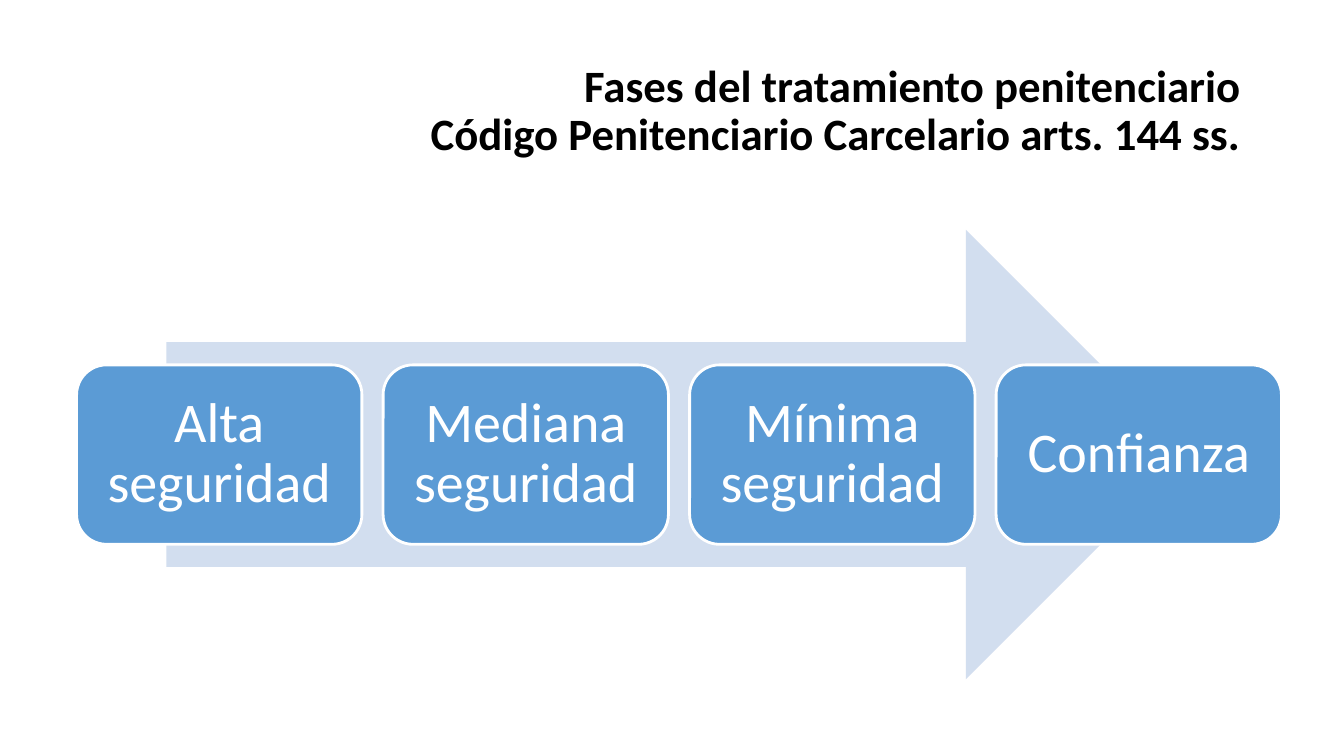
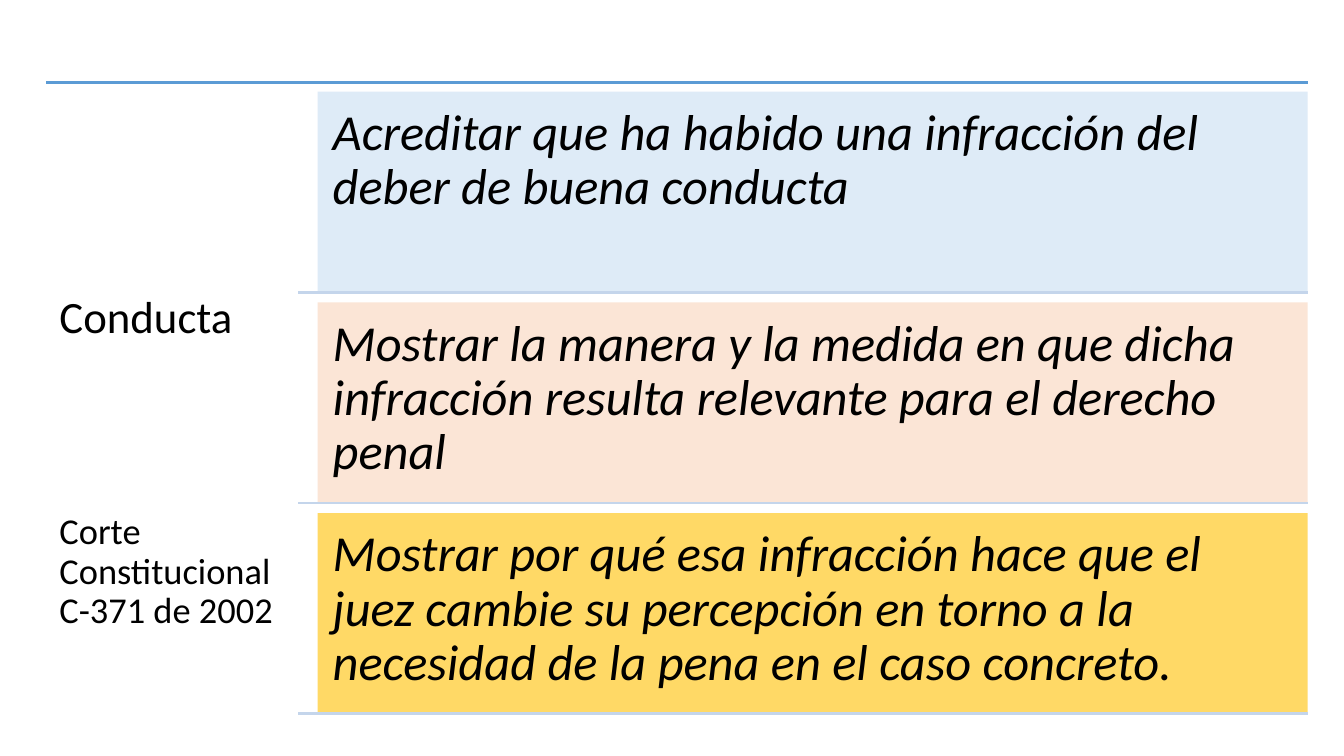
"""Builds two slides on the phases of prison treatment and on the criterion of conduct."""
from dataclasses import dataclass

from lxml import etree
from pptx import Presentation
from pptx.dml.color import RGBColor
from pptx.enum.shapes import MSO_CONNECTOR, MSO_SHAPE
from pptx.enum.text import MSO_ANCHOR, MSO_AUTO_SIZE, PP_ALIGN
from pptx.oxml.ns import qn
from pptx.util import Pt

LEFT, CENTER, RIGHT = PP_ALIGN.LEFT, PP_ALIGN.CENTER, PP_ALIGN.RIGHT
TOP, MIDDLE = MSO_ANCHOR.TOP, MSO_ANCHOR.MIDDLE
ARROW, ROUNDED, RECTANGLE = MSO_SHAPE.RIGHT_ARROW, MSO_SHAPE.ROUNDED_RECTANGLE, MSO_SHAPE.RECTANGLE
STRAIGHT = MSO_CONNECTOR.STRAIGHT
NO_AUTOFIT = MSO_AUTO_SIZE.NONE
TITLE_ONLY, BLANK = 5, 6
EMU_PER_PX = 9144


@dataclass(frozen=True)
class Theme:
    font: str = "Calibri"
    text: str = "000000"
    white: str = "FFFFFF"
    accent: str = "5B9BD5"
    arrow: str = "D2DEEF"
    divider: str = "C4D5EB"
    title_size: int = 32
    phase_size: int = 40
    heading_size: int = 32
    source_size: int = 26
    requirement_size: int = 36
    line_width: int = 2
    line_spacing: float = 0.9


THEME = Theme()
SLIDE_SIZE = (1333, 750)

TITLE = "Fases del tratamiento penitenciario\vCódigo Penitenciario Carcelario arts. 144 ss."
TITLE_BOX = (215, 40, 1026, 142)
PHASES = ["Alta seguridad", "Mediana seguridad", "Mínima seguridad", "Confianza"]
ARROW_BOX = (165, 228, 1016, 446)
PHASE_LEFT, PHASE_TOP, PHASE_WIDTH, PHASE_HEIGHT, PHASE_GAP = 76, 362, 283, 178, 21
PHASE_INSET = 17

HEADING = "Conducta"
SOURCE = "Corte Constitucional C-371 de 2002"
LABEL_BOX = (46, 279, 250, 438)
LABEL_INSET = 13
SOURCE_SPACE = 122
REQUIREMENTS = [
    ("Acreditar que ha habido una infracción del deber de buena conducta", "DEEBF7"),
    ("Mostrar la manera y la medida en que dicha infracción resulta relevante "
     "para el derecho penal", "FBE5D6"),
    ("Mostrar por qué esa infracción hace que el juez cambie su percepción en torno "
     "a la necesidad de la pena en el caso concreto.", "FFD966"),
]
RULE_LEFT, RULE_RIGHT, RULE_TOP, DIVIDER_LEFT = 46, 1297, 82, 296
ROW_LEFT, ROW_TOP, ROW_HEIGHT, ROW_GAP = 315, 91, 199, 10
ROW_INSET = 15


def px(*lengths):
    return [length * EMU_PER_PX for length in lengths]


def color(code):
    return RGBColor.from_string(code)


def format_paragraph(paragraph, size, code=THEME.text, align=LEFT, bold=False, italic=False):
    paragraph.alignment = align
    paragraph.line_spacing = THEME.line_spacing
    for run in paragraph.runs:
        font = run.font
        font.name, font.size = THEME.font, Pt(size)
        font.bold, font.italic = bold, italic
        font.color.rgb = color(code)


def set_frame(text_frame, inset, anchor):
    text_frame.word_wrap = True
    text_frame.auto_size = NO_AUTOFIT
    text_frame.vertical_anchor = anchor
    (margin,) = px(inset)
    text_frame.margin_left = text_frame.margin_right = margin
    text_frame.margin_top = text_frame.margin_bottom = margin


def add_block(slide, kind, box, fill, outline=None):
    shape = slide.shapes.add_shape(kind, *px(*box))
    shape.shadow.inherit = False
    shape.fill.solid()
    shape.fill.fore_color.rgb = color(fill)
    if outline:
        shape.line.color.rgb = color(outline)
        shape.line.width = Pt(THEME.line_width)
    else:
        shape.line.fill.background()
    return shape


def add_rule(slide, left, y, code):
    connector = slide.shapes.add_connector(STRAIGHT, *px(left, y, RULE_RIGHT, y))
    connector.line.color.rgb = color(code)
    connector.line.width = Pt(THEME.line_width)
    etree.SubElement(connector.element.spPr, qn("a:effectLst"))


def add_title(slide):
    title = slide.shapes.title
    title.left, title.top, title.width, title.height = px(*TITLE_BOX)
    title.text_frame.text = TITLE
    set_frame(title.text_frame, 10, MIDDLE)
    format_paragraph(title.text_frame.paragraphs[0], THEME.title_size, align=RIGHT, bold=True)


def build_phases(presentation):
    slide = presentation.slides.add_slide(presentation.slide_layouts[TITLE_ONLY])
    add_title(slide)
    add_block(slide, ARROW, ARROW_BOX, THEME.arrow)
    for index, phase in enumerate(PHASES):
        left = PHASE_LEFT + index * (PHASE_WIDTH + PHASE_GAP)
        box = (left, PHASE_TOP, PHASE_WIDTH, PHASE_HEIGHT)
        shape = add_block(slide, ROUNDED, box, THEME.accent, THEME.white)
        shape.text_frame.text = phase
        set_frame(shape.text_frame, PHASE_INSET, MIDDLE)
        format_paragraph(shape.text_frame.paragraphs[0], THEME.phase_size, THEME.white, CENTER)


def add_labels(slide):
    text_frame = slide.shapes.add_textbox(*px(*LABEL_BOX)).text_frame
    set_frame(text_frame, LABEL_INSET, TOP)
    text_frame.text = HEADING
    format_paragraph(text_frame.paragraphs[0], THEME.heading_size)
    source = text_frame.add_paragraph()
    source.text = SOURCE
    source.space_before = Pt(SOURCE_SPACE)
    format_paragraph(source, THEME.source_size)


def build_conduct(presentation):
    slide = presentation.slides.add_slide(presentation.slide_layouts[BLANK])
    add_rule(slide, RULE_LEFT, RULE_TOP, THEME.accent)
    add_labels(slide)
    for index, (requirement, fill) in enumerate(REQUIREMENTS):
        top = ROW_TOP + index * (ROW_HEIGHT + ROW_GAP)
        box = (ROW_LEFT, top, RULE_RIGHT - ROW_LEFT, ROW_HEIGHT)
        shape = add_block(slide, RECTANGLE, box, fill)
        shape.text_frame.text = requirement
        set_frame(shape.text_frame, ROW_INSET, TOP)
        format_paragraph(shape.text_frame.paragraphs[0], THEME.requirement_size, italic=True)
        add_rule(slide, DIVIDER_LEFT, top + ROW_HEIGHT, THEME.divider)


def main():
    presentation = Presentation()
    presentation.slide_width, presentation.slide_height = px(*SLIDE_SIZE)
    build_phases(presentation)
    build_conduct(presentation)
    presentation.save("out.pptx")


if __name__ == "__main__":
    main()
